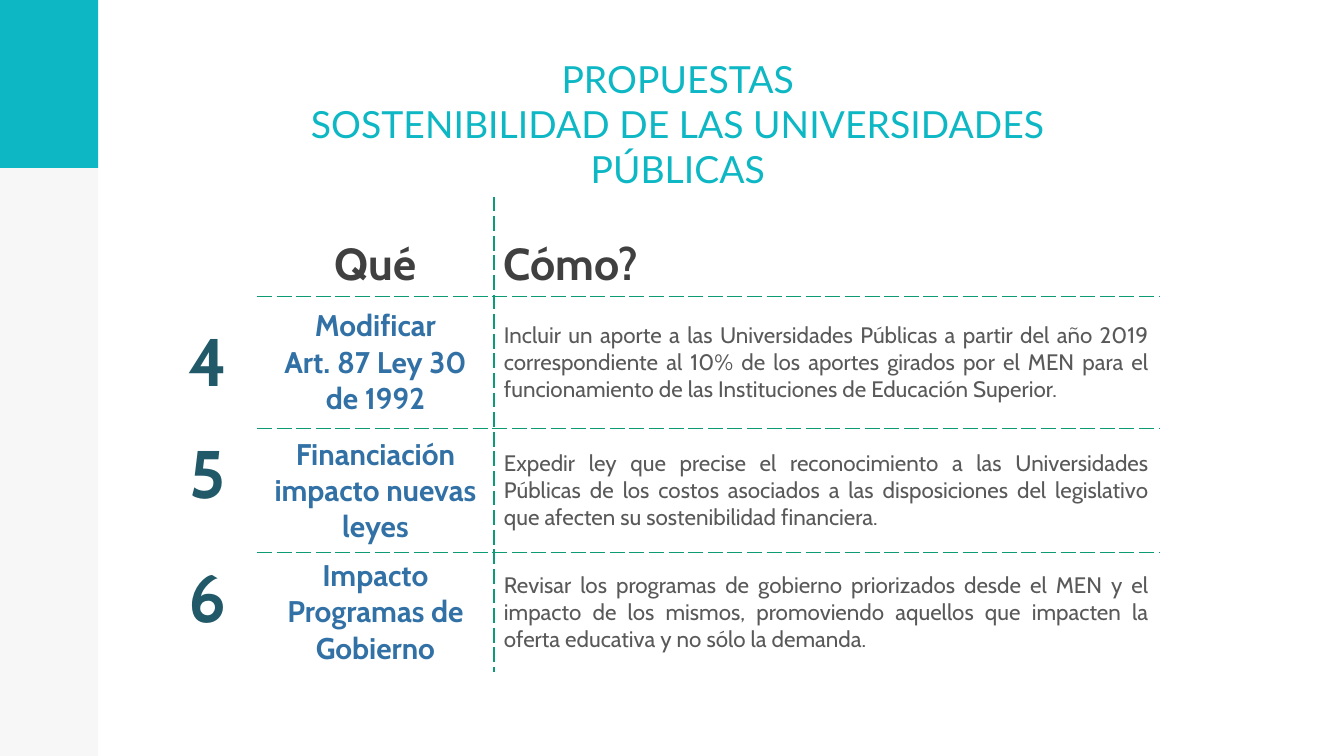
"""Builds the slide on proposals for the sustainability of public universities."""
from dataclasses import dataclass

import pptx
import pptx.dml.color
import pptx.enum.shapes
import pptx.enum.text
import pptx.oxml.ns
import pptx.util
from lxml import etree

PX = 5715
SLIDE = (1600, 900)
ANCHOR = pptx.enum.text.MSO_ANCHOR
ALIGN = pptx.enum.text.PP_ALIGN


@dataclass(frozen=True)
class Theme:
    """Colours, fonts and type sizes of the slide."""
    accent: str = "0DB7C4"
    shade: str = "000000"
    rule: str = "0C9B74"
    heading: str = "404040"
    number: str = "215968"
    topic: str = "3271A5"
    body: str = "595959"
    title_font: str = "Lato"
    table_font: str = "Cabin"
    title_size: int = 20
    heading_size: int = 24
    number_size: int = 36
    topic_size: int = 16
    body_size: int = 12


THEME = Theme()

COLUMNS = (118, 282, 792)
ROWS = (119, 157, 148, 142)
PROPOSALS = (
    ("4", "Modificar\nArt. 87 Ley 30 de 1992",
     "Incluir un aporte a las Universidades Públicas a partir del año 2019 "
     "correspondiente al 10% de los aportes girados por el MEN para el "
     "funcionamiento de las Instituciones de Educación Superior. "),
    ("5", "Financiación impacto nuevas leyes",
     "Expedir ley que precise el reconocimiento a las Universidades Públicas "
     "de los costos asociados a las disposiciones del legislativo que afecten "
     "su sostenibilidad financiera."),
    ("6", "Impacto Programas de Gobierno",
     "Revisar los programas de gobierno priorizados desde el MEN y el impacto "
     "de los mismos, promoviendo aquellos que impacten la oferta educativa y "
     "no sólo la demanda."),
)


def emu(box):
    """Turn a box in px into EMU lengths."""
    return [length * PX for length in box]


def rgb(colour):
    """Return a colour object for a hex string."""
    return pptx.dml.color.RGBColor.from_string(colour)


def add_child(parent, tag, **attributes):
    """Append an XML element with a prefixed tag."""
    return etree.SubElement(parent, pptx.oxml.ns.qn(tag), **attributes)


def write(frame, text, font, size, colour, align, bold=False):
    """Fill a text frame, one paragraph for each line."""
    frame.text = text
    for paragraph in frame.paragraphs:
        paragraph.alignment = align
        paragraph.font.name = font
        paragraph.font.size = pptx.util.Pt(size)
        paragraph.font.bold = bold
        paragraph.font.color.rgb = rgb(colour)


def add_band(slide, box, colour, opacity=100):
    """Add a plain rectangle, see-through below full opacity."""
    band = slide.shapes.add_shape(pptx.enum.shapes.MSO_SHAPE.RECTANGLE, *emu(box))
    band.shadow.inherit = False
    band.line.fill.background()
    band.fill.solid()
    band.fill.fore_color.rgb = rgb(colour)
    if opacity < 100:
        tint = next(band.fill._xPr.iter(pptx.oxml.ns.qn("a:srgbClr")))
        add_child(tint, "a:alpha", val=str(opacity * 1000))


def add_sidebar(slide, box):
    """Draw the pale side strip with its coloured head."""
    left, top, width, height = box
    add_band(slide, box, THEME.shade, opacity=3)
    add_band(slide, (left, top, width, 200), THEME.accent)


def add_title(slide, box):
    """Place and format the title placeholder."""
    title = slide.shapes.title
    title.left, title.top, title.width, title.height = emu(box)
    frame = title.text_frame
    frame.word_wrap = True
    frame.auto_size = pptx.enum.text.MSO_AUTO_SIZE.NONE
    frame.vertical_anchor = ANCHOR.TOP
    write(frame, "PROPUESTAS\nSOSTENIBILIDAD DE LAS UNIVERSIDADES PÚBLICAS",
          THEME.title_font, THEME.title_size, THEME.accent, ALIGN.CENTER)


def rule_cell(cell, dashed):
    """Dash the named sides of a cell and hide the others."""
    properties = cell._tc.get_or_add_tcPr()
    for side in "LRTB":
        line = add_child(properties, f"a:ln{side}", w=str(pptx.util.Pt(1)))
        if side in dashed:
            paint = add_child(line, "a:solidFill")
            add_child(paint, "a:srgbClr", val=THEME.rule)
            add_child(line, "a:prstDash", val="dash")
        else:
            add_child(line, "a:noFill")


def dashed_sides(row, column):
    """Tell which sides of a cell carry a dashed rule."""
    if column == 0:
        return ""
    inner = "R" if column == 1 else "L"
    above = "T" if row > 0 else ""
    below = "B" if row < len(ROWS) - 1 else ""
    return inner + above + below


def add_proposals(slide, box):
    """Build the table of what is proposed and how."""
    table = slide.shapes.add_table(len(ROWS), len(COLUMNS), *emu(box)).table
    table.first_row = table.horz_banding = False
    for column, width in zip(table.columns, COLUMNS):
        column.width = width * PX
    for row, height in zip(table.rows, ROWS):
        row.height = height * PX

    styles = (
        (THEME.number_size, THEME.number, ALIGN.CENTER, True),
        (THEME.topic_size, THEME.topic, ALIGN.CENTER, True),
        (THEME.body_size, THEME.body, ALIGN.JUSTIFY, False),
    )
    headings = ("", "Qué", "Cómo?")
    for row, texts in enumerate((headings, *PROPOSALS)):
        for column, text in enumerate(texts):
            cell = table.cell(row, column)
            rule_cell(cell, dashed_sides(row, column))
            cell.fill.background()
            cell.margin_left = cell.margin_right = 12 * PX
            cell.margin_top = cell.margin_bottom = 6 * PX
            size, colour, align, bold = styles[column]
            cell.vertical_anchor = ANCHOR.MIDDLE
            if row == 0:
                size, colour, bold = THEME.heading_size, THEME.heading, True
                align = ALIGN.LEFT if column == 2 else ALIGN.CENTER
                cell.vertical_anchor = ANCHOR.BOTTOM
            elif column == 0 and row > 1:
                cell.vertical_anchor = ANCHOR.TOP
            write(cell.text_frame, text, THEME.table_font, size, colour, align, bold)


def main():
    """Assemble and save the slide."""
    deck = pptx.Presentation()
    deck.slide_width, deck.slide_height = emu(SLIDE)
    slide = deck.slides.add_slide(deck.slide_layouts[5])
    add_sidebar(slide, (0, 0, 117, 900))
    add_proposals(slide, (188, 234, sum(COLUMNS), sum(ROWS)))
    add_title(slide, (344, 59, 926, 107))
    deck.save("out.pptx")


if __name__ == "__main__":
    main()
